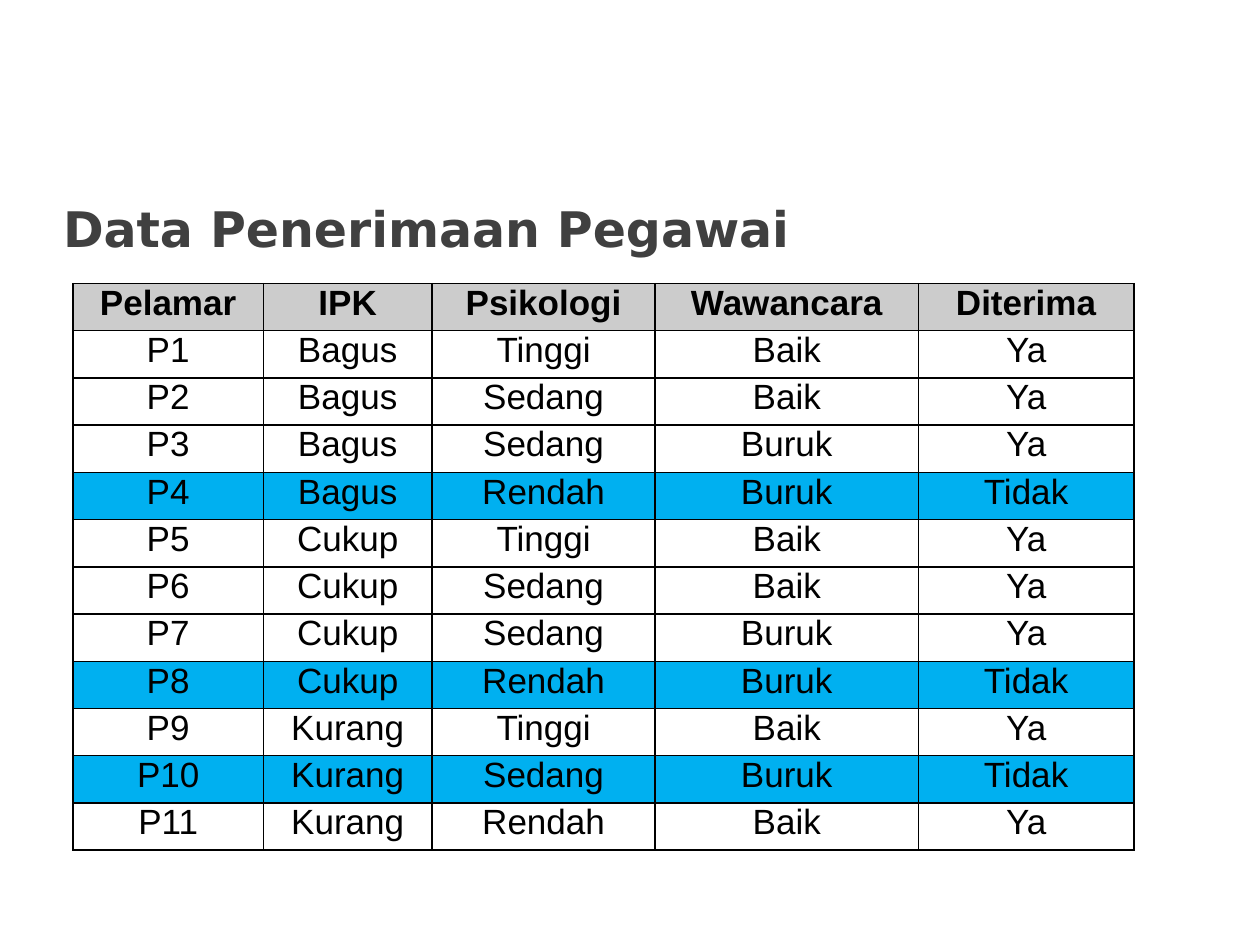
"""Build a slide with a table of job applicants and hiring results."""
from lxml.etree import SubElement
from pptx import Presentation
from pptx.dml.color import RGBColor
from pptx.enum.text import MSO_ANCHOR, PP_ALIGN
from pptx.oxml.ns import qn
from pptx.util import Inches, Pt

COLORS = {"title": "404040", "text": "000000", "border": "000000",
          "header": "CCCCCC", "rejected": "00B0F0", "background": "FFFFFF"}
HEADERS = ["Pelamar", "IPK", "Psikologi", "Wawancara", "Diterima"]
APPLICANTS = [
    ["P1", "Bagus", "Tinggi", "Baik", "Ya"],
    ["P2", "Bagus", "Sedang", "Baik", "Ya"],
    ["P3", "Bagus", "Sedang", "Buruk", "Ya"],
    ["P4", "Bagus", "Rendah", "Buruk", "Tidak"],
    ["P5", "Cukup", "Tinggi", "Baik", "Ya"],
    ["P6", "Cukup", "Sedang", "Baik", "Ya"],
    ["P7", "Cukup", "Sedang", "Buruk", "Ya"],
    ["P8", "Cukup", "Rendah", "Buruk", "Tidak"],
    ["P9", "Kurang", "Tinggi", "Baik", "Ya"],
    ["P10", "Kurang", "Sedang", "Buruk", "Tidak"],
    ["P11", "Kurang", "Rendah", "Baik", "Ya"],
]
COL_WIDTHS = [1.51, 1.34, 1.77, 2.09, 1.71]
TABLE_HEIGHT = 4.5
TITLE_BOX = {"left": Inches(0.4), "top": Inches(1.46),
             "width": Inches(9.11), "height": Inches(0.7)}
TITLE_FRAME = {"vertical_anchor": MSO_ANCHOR.MIDDLE, "word_wrap": True}
TITLE_FONT = {"name": "DejaVu Sans", "size": Pt(28), "bold": True}
CELL_FONT = {"name": "Arial", "size": Pt(20)}
CELL_FORMAT = {"margin_left": Inches(0.07), "margin_right": Inches(0.07),
               "margin_top": 0, "margin_bottom": 0,
               "vertical_anchor": MSO_ANCHOR.TOP}


def apply(target, values):
    for name, value in values.items():
        setattr(target, name, value)


def add_borders(cell):
    tc_pr = cell._tc.get_or_add_tcPr()
    for side in ("lnL", "lnR", "lnT", "lnB"):
        ln = SubElement(tc_pr, qn(f"a:{side}"), w=str(Pt(1)))
        fill = SubElement(ln, qn("a:solidFill"))
        SubElement(fill, qn("a:srgbClr"), val=COLORS["border"])


prs = Presentation()
prs.slide_width, prs.slide_height = Inches(10), Inches(7.5)
s = prs.slides.add_slide(prs.slide_layouts[5])
s.background.fill.solid()
s.background.fill.fore_color.rgb = RGBColor.from_string(COLORS["background"])

title = s.shapes.title
apply(title, TITLE_BOX)
tf = title.text_frame
tf.text = "Data Penerimaan Pegawai"
apply(tf, TITLE_FRAME)
p = tf.paragraphs[0]
p.alignment = PP_ALIGN.LEFT
r = p.runs[0]
apply(r.font, TITLE_FONT)
r.font.color.rgb = RGBColor.from_string(COLORS["title"])

rows = [HEADERS] + APPLICANTS
table = s.shapes.add_table(
    len(rows), len(HEADERS), Inches(0.58), Inches(2.25),
    Inches(sum(COL_WIDTHS)), Inches(TABLE_HEIGHT)).table
table.horz_banding = False
for column, width in zip(table.columns, COL_WIDTHS):
    column.width = Inches(width)

for i, values in enumerate(rows):
    table.rows[i].height = Inches(TABLE_HEIGHT / len(rows))
    fill_name = "header" if i == 0 else "rejected" if values[-1] == "Tidak" else None
    for j, value in enumerate(values):
        cell = table.cell(i, j)
        apply(cell, CELL_FORMAT)
        add_borders(cell)
        if fill_name:
            cell.fill.solid()
            cell.fill.fore_color.rgb = RGBColor.from_string(COLORS[fill_name])
        else:
            cell.fill.background()
        p = cell.text_frame.paragraphs[0]
        p.alignment = PP_ALIGN.CENTER
        r = p.add_run()
        r.text = value
        apply(r.font, CELL_FONT)
        r.font.bold = i == 0
        r.font.color.rgb = RGBColor.from_string(COLORS["text"])

prs.save("out.pptx")
